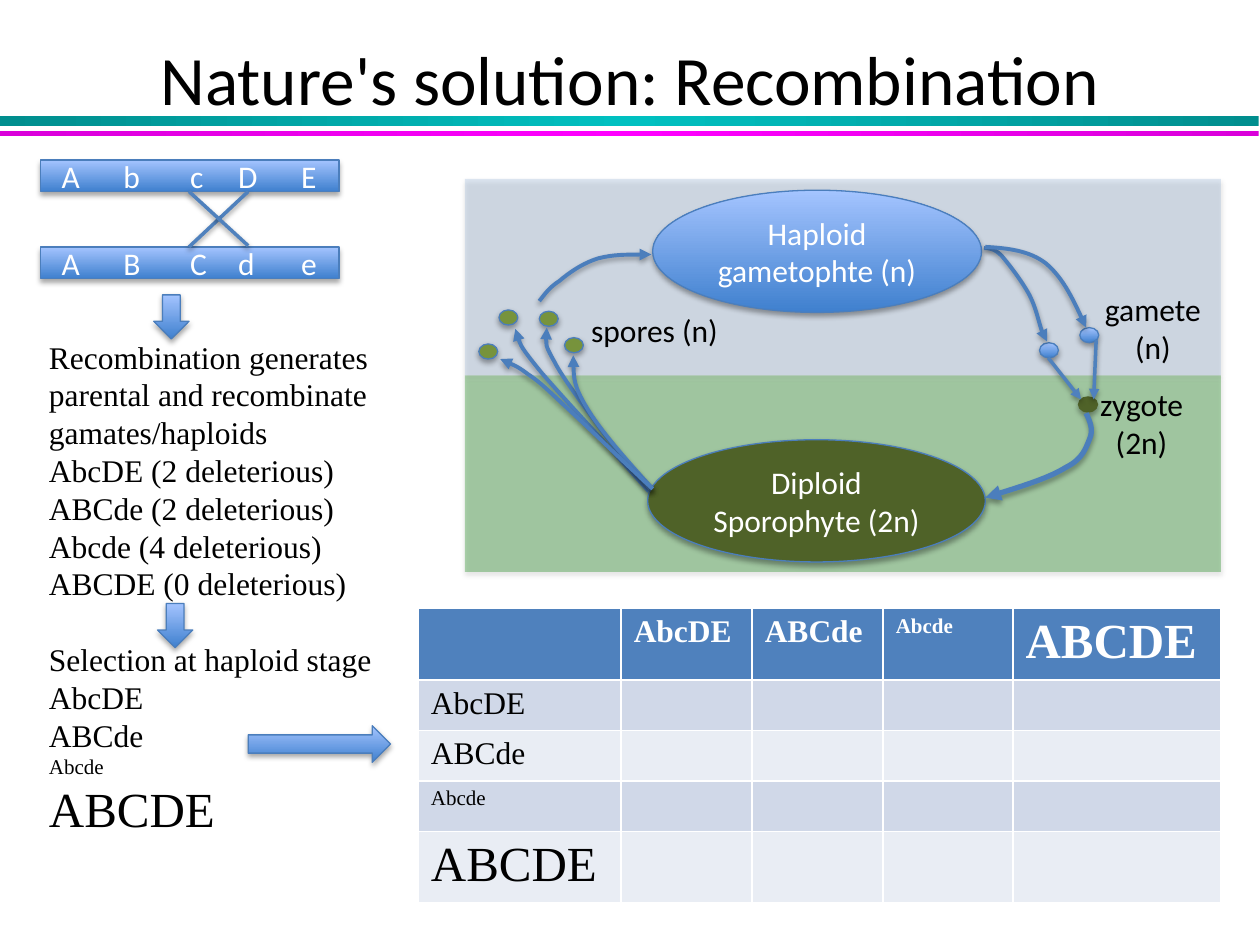
from copy import deepcopy

from lxml.etree import SubElement
from pptx import Presentation
from pptx.dml.color import RGBColor
from pptx.enum.shapes import MSO_CONNECTOR as Connector
from pptx.enum.shapes import MSO_SHAPE as Shape
from pptx.enum.text import MSO_ANCHOR as Anchor
from pptx.enum.text import PP_ALIGN as Align
from pptx.oxml.ns import qn
from pptx.util import Inches, Pt

SANS, SERIF = "Calibri", "Times New Roman"
BLACK, WHITE = "000000", "FFFFFF"
BLUE_GRADIENT = ("3F80CE", "A4C4FF")
OUTLINE, ARROW_BLUE = "4B7EBC", "4F81BD"
DARK_GREEN, SPORE_GREEN = "4F6228", "77933C"
GENOTYPE_SIZES = {"AbcDE": 18, "ABCde": 18, "Abcde": 12, "ABCDE": 28}

SPORES = [(3.8, 2.73), (4.48, 2.68), (3.96, 2.46), (4.28, 2.47)]
GAMETES = [(8.25, 2.72), (8.57, 2.6)]
ZYGOTE = (8.56, 3.15)

# Each curve is a start point followed by three points per Bezier segment.
CURVES = [
    [(5.15, 3.9), (4.82, 3.53), (4.48, 3.17), (4.3, 2.96), (4.12, 2.74), (4.1, 2.67), (4.09, 2.61)],
    [(5.16, 3.88), (5.05, 3.75), (4.93, 3.62), (4.8, 3.45), (4.68, 3.28), (4.47, 3.01),
     (4.4, 2.87), (4.32, 2.73), (4.33, 2.66), (4.34, 2.6)],
    [(5.18, 3.88), (4.97, 3.65), (4.76, 3.41), (4.66, 3.24), (4.55, 3.06), (4.55, 2.94), (4.55, 2.82)],
    [(5.18, 3.88), (4.94, 3.66), (4.71, 3.43), (4.47, 3.21), (4.31, 3.06), (4.28, 3.03),
     (4.19, 2.97), (4.11, 2.91), (4.04, 2.88), (3.97, 2.85)],
    [(4.28, 2.39), (4.32, 2.34), (4.36, 2.28), (4.44, 2.23), (4.51, 2.17), (4.62, 2.09),
     (4.75, 2.05), (4.87, 2.02), (5.02, 2.02), (5.17, 2.02)],
    [(7.81, 1.97), (7.85, 1.97), (7.89, 1.97), (7.95, 2.03), (8.01, 2.1), (8.11, 2.23),
     (8.17, 2.34), (8.23, 2.46), (8.26, 2.65), (8.31, 2.71)],
    [(7.82, 1.96), (8, 1.97), (8.17, 1.99), (8.3, 2.09), (8.43, 2.2), (8.53, 2.4), (8.62, 2.6)],
]
ZYGOTE_CURVE = [(8.62, 3.28), (8.65, 3.34), (8.68, 3.41), (8.65, 3.48), (8.62, 3.55),
                (8.6, 3.64), (8.46, 3.71), (8.33, 3.79), (8.08, 3.87), (7.82, 3.95)]


def color(value):
    return RGBColor.from_string(value)


def inches(*values):
    return [Inches(value) for value in values]


def format_paragraph(paragraph, size=18, font=SANS, text_color=BLACK, align=None, bold=None):
    paragraph.alignment = align
    for run in paragraph.runs:
        run.font.size = Pt(size)
        run.font.name = font
        run.font.bold = bold
        run.font.color.rgb = color(text_color)


def add_shadow(shape, opacity=35, distance=1.8):
    effects = SubElement(shape._element.spPr, qn("a:effectLst"))
    shadow = SubElement(effects, qn("a:outerShdw"), blurRad=str(Pt(3.1)),
                        dist=str(Pt(distance)), dir="5400000", rotWithShape="0")
    shadow_color = SubElement(shadow, qn("a:srgbClr"), val=BLACK)
    SubElement(shadow_color, qn("a:alpha"), val=str(opacity * 1000))


def add_arrowhead(shape):
    SubElement(shape._element.spPr.find(qn("a:ln")), qn("a:tailEnd"), type="triangle")


def fill_gradient(shape, colors, angle):
    shape.fill.gradient()
    shape.fill.gradient_angle = angle
    stop_list = shape._element.spPr.find(qn("a:gradFill")).find(qn("a:gsLst"))
    for _ in colors[2:]:
        stop_list.append(deepcopy(stop_list[-1]))
    for index, (stop, value) in enumerate(zip(shape.fill.gradient_stops, colors)):
        stop.position = index / (len(colors) - 1)
        stop.color.rgb = color(value)


def add_bar(shapes, top, height, edge, middle):
    bar = shapes.add_shape(Shape.RECTANGLE, *inches(0, top, 9.99, height))
    fill_gradient(bar, (edge, middle, edge), 0)
    bar.line.fill.background()
    bar.shadow.inherit = False


def add_figure(shapes, kind, box, fill=None, outline=OUTLINE, text=""):
    """Shadowed shape; without a fill it gets the blue gradient."""
    shape = shapes.add_shape(kind, *inches(*box))
    if fill:
        shape.fill.solid()
        shape.fill.fore_color.rgb = color(fill)
    else:
        fill_gradient(shape, BLUE_GRADIENT, 90)
    shape.line.color.rgb = color(outline)
    shape.line.width = Pt(0.75)
    add_shadow(shape)
    if text:
        shape.text_frame.text = text
        shape.text_frame.vertical_anchor = Anchor.MIDDLE
        format_paragraph(shape.text_frame.paragraphs[0], text_color=WHITE, align=Align.CENTER)
    return shape


def add_zone(shapes, top, fill):
    zone = add_figure(shapes, Shape.RECTANGLE, (3.69, top, 6, 1.56), fill)
    zone.line.fill.background()
    fill_color = zone._element.spPr.find(qn("a:solidFill"))[0]
    SubElement(fill_color, qn("a:alpha"), val="30000")


def add_chromosome(shapes, top, alleles):
    """Bar whose alleles are set on tab stops."""
    bar = add_figure(shapes, Shape.RECTANGLE, (0.32, top, 2.37, 0.25), text="\t".join(alleles))
    frame = bar.text_frame
    frame.margin_left, frame.margin_right = Inches(0.17), 0
    paragraph = frame.paragraphs[0]
    paragraph.alignment = Align.LEFT
    tabs = SubElement(paragraph._p.get_or_add_pPr(), qn("a:tabLst"))
    for position in (0.49, 1.02, 1.4, 1.9):
        SubElement(tabs, qn("a:tab"), pos=str(Inches(position)), algn="l")


def add_line(shapes, start, end, arrow=False):
    line = shapes.add_connector(Connector.STRAIGHT, *inches(*start, *end))
    line.line.color.rgb = color(ARROW_BLUE)
    line.line.width = Pt(2)
    if arrow:
        add_arrowhead(line)
    add_shadow(line, 38, 1.6)


def add_curve(shapes, points, width=2.25):
    """Freeform arrow whose points are joined by Bezier segments."""
    start, *others = [inches(*point) for point in points]
    builder = shapes.build_freeform(*start, scale=1.0)
    builder.add_line_segments(others, close=False)
    curve = builder.convert_to_shape()
    outline = next(curve._element.iter(qn("a:path")))
    steps = outline.findall(qn("a:lnTo"))
    for index in range(0, len(steps), 3):
        segment = SubElement(outline, qn("a:cubicBezTo"))
        for step in steps[index:index + 3]:
            segment.append(step[0])
            outline.remove(step)
    curve.fill.background()
    curve.line.color.rgb = color(OUTLINE)
    curve.line.width = Pt(width)
    add_arrowhead(curve)
    add_shadow(curve)


def add_label(shapes, box, text):
    label = shapes.add_textbox(*inches(*box))
    label.text_frame.word_wrap = True
    label.text_frame.text = text
    for paragraph in label.text_frame.paragraphs:
        format_paragraph(paragraph, align=Align.CENTER)


def add_explanation(shapes):
    lines = [
        "Recombination generates parental and recombinate gamates/haploids",
        "AbcDE (2 deleterious)", "ABCde (2 deleterious)",
        "Abcde (4 deleterious)", "ABCDE (0 deleterious)",
        "Selection at haploid stage", *GENOTYPE_SIZES,
    ]
    frame = shapes.add_textbox(*inches(0.29, 2.63, 2.89, 4.11)).text_frame
    frame.word_wrap = True
    frame.text = "\n".join(lines)
    for paragraph in frame.paragraphs:
        format_paragraph(paragraph, GENOTYPE_SIZES.get(paragraph.text, 18), SERIF)
        if paragraph.text.startswith("Selection"):
            paragraph.space_before = Pt(21.6)


def add_cross_table(shapes):
    table = shapes.add_table(5, 5, *inches(3.32, 4.83, 6.38, 2.35)).table
    for column, width in zip(table.columns, (1.61, 1.04, 1.04, 1.03, 1.65)):
        column.width = Inches(width)
    for row, height in zip(table.rows, (0.56, 0.4, 0.4, 0.4, 0.56)):
        row.height = Inches(height)
    for index, (genotype, size) in enumerate(GENOTYPE_SIZES.items(), start=1):
        for cell, text_color, bold in ((table.cell(0, index), WHITE, True),
                                       (table.cell(index, 0), BLACK, False)):
            cell.text = genotype
            format_paragraph(cell.text_frame.paragraphs[0], size, SERIF, text_color, bold=bold)
    for index, fill in enumerate((ARROW_BLUE, "D0D8E8", "E9EDF4", "D0D8E8", "E9EDF4")):
        for cell in table.rows[index].cells:
            cell.fill.solid()
            cell.fill.fore_color.rgb = color(fill)


def add_life_cycle(shapes):
    add_zone(shapes, 2.98, "008000")
    add_zone(shapes, 1.42, "95B3D7")
    add_figure(shapes, Shape.OVAL, (5.18, 1.51, 2.61, 0.97), text="Haploid gametophte (n)")
    add_figure(shapes, Shape.OVAL, (5.14, 3.49, 2.68, 0.97), DARK_GREEN,
               text="Diploid Sporophyte (2n)")
    cells = [(spot, None, OUTLINE) for spot in GAMETES]
    cells += [(ZYGOTE, DARK_GREEN, DARK_GREEN)]
    cells += [(spot, SPORE_GREEN, OUTLINE) for spot in SPORES]
    for spot, fill, outline in cells:
        add_figure(shapes, Shape.OVAL, (*spot, 0.15, 0.12), fill, outline)
    add_label(shapes, (8.6, 3.01, 0.92, 0.71), "zygote\n(2n)")
    add_label(shapes, (8.61, 2.25, 1.08, 0.71), "gamete\n(n)")
    add_line(shapes, (8.7, 2.7), (8.68, 3.17), arrow=True)
    add_line(shapes, (8.32, 2.84), (8.58, 3.17), arrow=True)
    for points in CURVES:
        add_curve(shapes, points)
    add_curve(shapes, ZYGOTE_CURVE, width=3)


def main():
    presentation = Presentation()
    presentation.slide_width, presentation.slide_height = inches(10, 7.5)
    slide = presentation.slides.add_slide(presentation.slide_layouts[5])
    shapes = slide.shapes
    title = shapes.title
    title.left, title.top, title.width, title.height = inches(0.5, 0.3, 9, 0.64)
    title.text_frame.text = "Nature's solution: Recombination"
    title.text_frame.vertical_anchor = Anchor.MIDDLE
    format_paragraph(title.text_frame.paragraphs[0], 39.6, align=Align.CENTER)
    add_bar(shapes, 0.92, 0.08, "008E8E", "00C0C0")
    add_bar(shapes, 1.04, 0.04, "DA00DA", "FF00FF")
    add_chromosome(shapes, 1.27, "AbcDE")
    add_chromosome(shapes, 1.96, "ABCde")
    add_line(shapes, (1.5, 1.96), (1.97, 1.52))
    add_line(shapes, (1.5, 1.52), (1.97, 1.95))
    add_explanation(shapes)
    add_life_cycle(shapes.add_group_shape().shapes)
    add_cross_table(shapes)
    add_figure(shapes, Shape.DOWN_ARROW, (1.22, 2.34, 0.28, 0.35))
    add_figure(shapes, Shape.DOWN_ARROW, (1.25, 4.79, 0.28, 0.35))
    add_figure(shapes, Shape.RIGHT_ARROW, (1.97, 5.76, 1.13, 0.29))
    add_label(shapes, (4.56, 2.42, 1.27, 0.4), "spores (n)")
    presentation.save("out.pptx")


if __name__ == "__main__":
    main()
